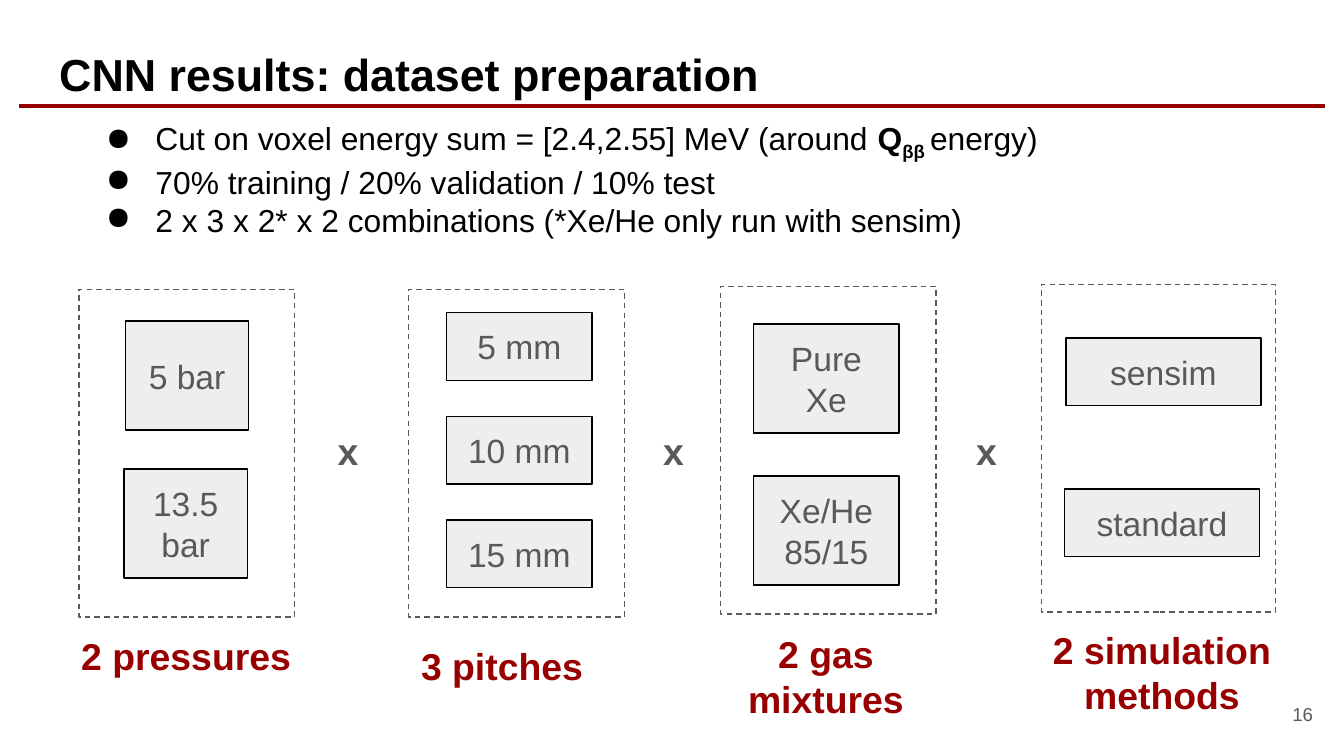
from lxml import etree
from pptx import Presentation
from pptx.dml.color import RGBColor
from pptx.enum import dml, shapes, text
from pptx.oxml.ns import qn
from pptx.util import Pt

BLACK = RGBColor(0x00, 0x00, 0x00)
GREY = RGBColor(0x59, 0x59, 0x59)
PALE = RGBColor(0xEE, 0xEE, 0xEE)
RED = RGBColor(0x98, 0x00, 0x00)
LEFT, CENTER, RIGHT = text.PP_ALIGN.LEFT, text.PP_ALIGN.CENTER, text.PP_ALIGN.RIGHT
TOP, MIDDLE = text.MSO_ANCHOR.TOP, text.MSO_ANCHOR.MIDDLE


def write(box, words, size, color, bold=False, align=CENTER, anchor=TOP, inset=1.8):
    """Fill a shape with wrapped text in one style, one paragraph a line."""
    frame = box.text_frame
    frame.text = words
    frame.word_wrap = True
    frame.auto_size = text.MSO_AUTO_SIZE.NONE
    frame.vertical_anchor = anchor
    frame.margin_left = frame.margin_right = Pt(inset)
    frame.margin_top = frame.margin_bottom = Pt(inset)
    for para in frame.paragraphs:
        para.alignment = align
        for span in para.runs:
            span.font.name = "Arial"
            span.font.size = Pt(size)
            span.font.bold = bold
            span.font.color.rgb = color


def add_box(left, top, width, height, line_color):
    box = page.shapes.add_shape(shapes.MSO_SHAPE.RECTANGLE,
                                Pt(left), Pt(top), Pt(width), Pt(height))
    box.shadow.inherit = False
    box.fill.background()
    box.line.color.rgb = line_color
    box.line.width = Pt(0.75)
    return box


deck = Presentation()
deck.slide_width, deck.slide_height = Pt(720), Pt(405)
page = deck.slides.add_slide(deck.slide_layouts[5])

# Title and the rule under it
title = page.shapes.title
title.left, title.top, title.width, title.height = Pt(24.5), Pt(18), Pt(480), Pt(47.5)
write(title, "CNN results: dataset preparation", 24, BLACK, True, LEFT, inset=7.2)

rule = page.shapes.add_connector(shapes.MSO_CONNECTOR.STRAIGHT,
                                 Pt(10), Pt(57), Pt(710), Pt(57))
rule.line.color.rgb = RED
rule.line.width = Pt(2.25)
etree.SubElement(rule._element.spPr, qn("a:effectLst"))

# Bullets
bullets = page.shapes.add_textbox(Pt(45.5), Pt(62), Pt(587.5), Pt(65))
write(bullets, "Cut on voxel energy sum = [2.4,2.55] MeV (around \n"
               "70% training / 20% validation / 10% test\n"
               "2 x 3 x 2* x 2 combinations (*Xe/He only run with sensim)",
      17, BLACK, align=LEFT)
for para in bullets.text_frame.paragraphs:
    props = para._p.get_or_add_pPr()
    props.set("marL", str(Pt(36)))
    props.set("indent", str(-Pt(26.5)))
    bullet_color = etree.SubElement(props, qn("a:buClr"))
    etree.SubElement(bullet_color, qn("a:srgbClr"), val=str(BLACK))
    etree.SubElement(props, qn("a:buChar"), char="●")

cut = bullets.text_frame.paragraphs[0]
for words, bold, baseline in (("Q", True, 0), ("ββ ", True, -25000), ("energy)", False, 0)):
    span = cut.add_run()
    span.text = words
    span.font.name = "Arial"
    span.font.size = Pt(17)
    span.font.bold = bold
    span.font.color.rgb = BLACK
    if baseline:
        span.font._element.set("baseline", str(baseline))

# Each group: frame (left, top, width), caption (words, left, top),
# option size (width, height), options (words, left, top)
FRAME_HEIGHT = 175.5
groups = [
    ((42.25, 155, 115.5), ("2 pressures", 35.25, 337.5), (66, 58.5),
     [("5 bar", 67.25, 172), ("13.5 bar", 66.5, 251.25)]),
    ((219, 155, 115.5), ("3 pitches", 204.5, 342.5), (78, 36.25),
     [(f"{5 * (n + 1)} mm", 239.25, 167.5 + 55.5 * n) for n in range(3)]),
    ((386, 153.5, 115.5), ("2 gas mixtures", 378, 336.5), (78, 58.5),
     [("Pure Xe", 403.75, 173.5), ("Xe/He 85/15", 403.75, 255)]),
    ((558, 152.5, 125.5), ("2 simulation methods", 558, 334), (104.5, 36.25),
     [("sensim", 571, 181), ("standard", 570.25, 262)]),
]
for (left, top, width), caption, size, options in groups:
    frame = add_box(left, top, width, FRAME_HEIGHT, GREY)
    frame.line.dash_style = dml.MSO_LINE.DASH

    for words, option_left, option_top in options:
        option = add_box(option_left, option_top, *size, BLACK)
        option.fill.solid()
        option.fill.fore_color.rgb = PALE
        write(option, words, 18, GREY, anchor=MIDDLE, inset=7.2)

    words, caption_left, caption_top = caption
    label = page.shapes.add_textbox(Pt(caption_left), Pt(caption_top), Pt(129), Pt(51))
    write(label, words, 20, RED, True)

# Multiplication signs between the groups
for left in (169.25, 343.5, 511.25):
    times = page.shapes.add_textbox(Pt(left), Pt(227.5), Pt(34.5), Pt(27))
    write(times, "x", 20, GREY, True)

number = page.shapes.add_textbox(Pt(667.5), Pt(367), Pt(43), Pt(31))
write(number, "16", 10, GREY, align=RIGHT, anchor=MIDDLE, inset=7.2)

deck.save("out.pptx")
